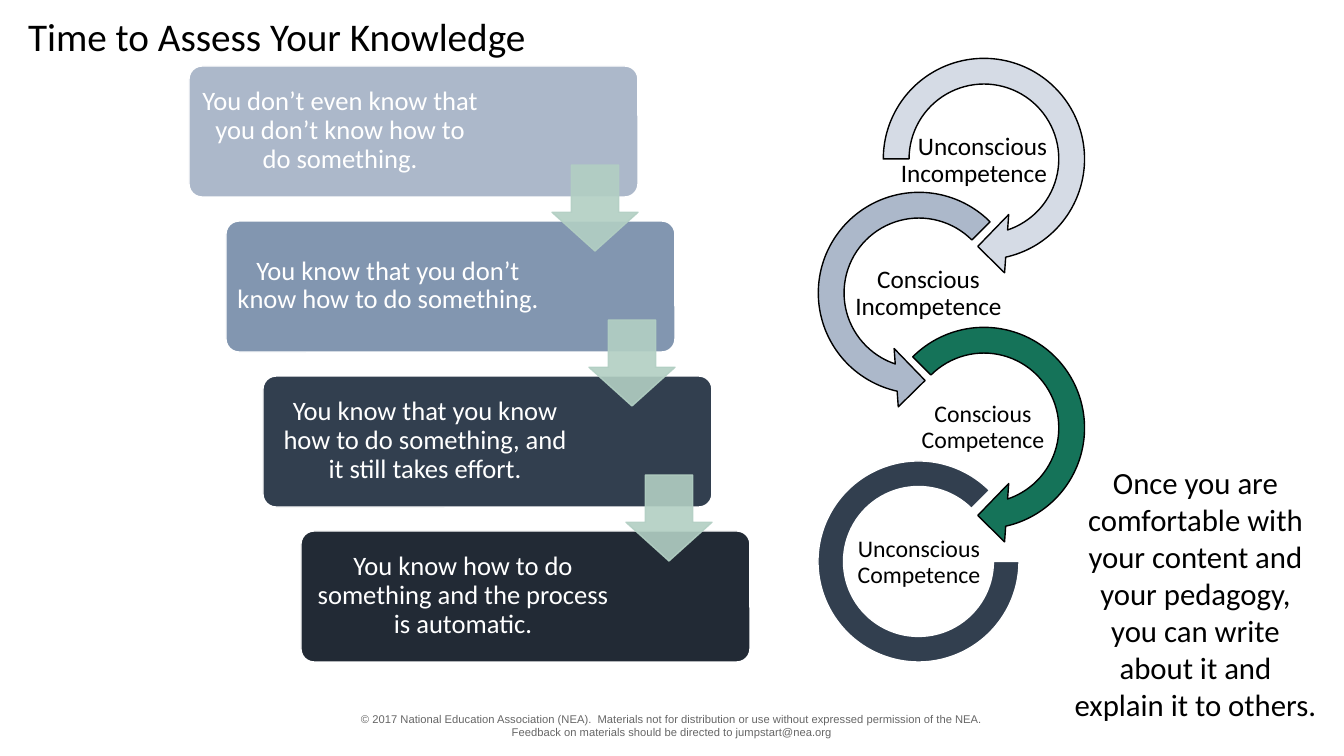
from lxml import etree
from pptx import Presentation
from pptx.dml.color import RGBColor
from pptx.enum.shapes import MSO_SHAPE
from pptx.enum.text import MSO_ANCHOR, PP_ALIGN
from pptx.oxml.ns import qn
from pptx.util import Pt

PX = 914400 / 100.8
LEFT, CENTER, RIGHT = PP_ALIGN.LEFT, PP_ALIGN.CENTER, PP_ALIGN.RIGHT
TOP, MIDDLE = MSO_ANCHOR.TOP, MSO_ANCHOR.MIDDLE
ROUND_RECT, DOWN_ARROW = MSO_SHAPE.ROUNDED_RECTANGLE, MSO_SHAPE.DOWN_ARROW
RIGHT_TURN, LEFT_TURN = MSO_SHAPE.CIRCULAR_ARROW, MSO_SHAPE.LEFT_CIRCULAR_ARROW
BLOCK_ARC = MSO_SHAPE.BLOCK_ARC

COLORS = {
    "black": "000000", "white": "FFFFFF", "grey": "666666",
    "pale": "D5DBE5", "light": "ACB8CA", "medium": "8296B0",
    "dark": "323F4F", "darkest": "222A35",
    "green": "157359", "mint": "B2CFC3",
}

# Text, fill and text width of each step
STEPS = [
    ("You don’t even know that you don’t know how to do something.", "light", 296),
    ("You know that you don’t know how to do something.", "medium", 318),
    ("You know that you know how to do something, and it still takes effort.", "dark", 318),
    ("You know how to do something and the process is automatic.", "darkest", 318),
]

# Shape, box (x, y, size), adjustments, fill and outline of each ring
RINGS = [
    (RIGHT_TURN, (867, 42, 234), (0.11, 11.42, 45, 108, 0.125), "pale", "black"),
    (LEFT_TURN, (802, 176, 234), (0.11, 11.42, 63, 189, 0.125), "light", "black"),
    (RIGHT_TURN, (867, 311, 234), (0.11, 11.42, 45, 135, 0.125), "green", "black"),
    (BLOCK_ARC, (818, 461, 201), (0, 189, 0.127), "dark", "white"),
]

# Text, box, font size and alignment of each ring label
LABELS = [
    ("Unconscious Incompetence", (889, 128, 159, 66), 18, RIGHT),
    ("Conscious Incompetence", (846, 261, 165, 66), 18, CENTER),
    ("Conscious Competence", (918, 395, 130, 66), 17, CENTER),
    ("Unconscious Competence", (854, 530, 130, 66), 17, CENTER),
]


def px(n):
    return round(n * PX)


def rgb(name):
    return RGBColor.from_string(COLORS[name])


def write(s, *lines, size, color="black", font="Calibri", align=CENTER,
          anchor=TOP, margins=(10, 5), spacing=None):
    tf = s.text_frame
    tf.word_wrap = True
    tf.vertical_anchor = anchor
    tf.margin_left = tf.margin_right = px(margins[0])
    tf.margin_top = tf.margin_bottom = px(margins[1])
    for i, line in enumerate(lines):
        p = tf.paragraphs[0] if i == 0 else tf.add_paragraph()
        p.alignment = align
        if spacing:
            p.line_spacing = spacing
        r = p.add_run()
        r.text = line
        r.font.size = Pt(size)
        r.font.name = font
        r.font.color.rgb = rgb(color)


def add_text(slide, box, *lines, **style):
    s = slide.shapes.add_textbox(*map(px, box))
    write(s, *lines, **style)


def add_shape(slide, kind, box, adjustments, fill, line, opacity=None):
    s = slide.shapes.add_shape(kind, *map(px, box))
    s.shadow.inherit = False
    for i, value in enumerate(adjustments):
        s.adjustments[i] = value
    s.fill.solid()
    s.fill.fore_color.rgb = rgb(fill)
    s.line.color.rgb = rgb(line)
    s.line.width = Pt(1)
    if opacity:
        for clr in s._element.spPr.iter(qn("a:srgbClr")):
            etree.SubElement(clr, qn("a:alpha")).set("val", str(opacity * 1000))


def add_title(slide, box, text):
    s = slide.shapes.title
    s.left, s.top, s.width, s.height = map(px, box)
    write(s, text, size=28, align=LEFT)


def add_steps(slide):
    places = [(189 + 112 * i // 3, 66 + 155 * i) for i in range(len(STEPS))]
    for (x, y), (text, fill, width) in zip(places, STEPS):
        add_shape(slide, ROUND_RECT, (x, y, 449, 131), (0.1,), fill, "white")
        add_text(slide, (x + 3, y + 3, width, 124), text, size=19, color="white",
                 anchor=MIDDLE, margins=(8, 8), spacing=0.9)
    # Arrows lie over the boxes they join
    for x, y in places[:-1]:
        add_shape(slide, DOWN_ARROW, (x + 363, y + 99, 86, 86), (0.55, 0.45),
                  "mint", "mint", opacity=90)


def add_rings(slide):
    for kind, (x, y, size), adjustments, fill, line in RINGS:
        add_shape(slide, kind, (x, y, size, size), adjustments, fill, line)
    for text, box, size, align in LABELS:
        add_text(slide, box, text, size=size, align=align, anchor=MIDDLE,
                 margins=(1, 1), spacing=0.9)


def main():
    prs = Presentation()
    prs.slide_width, prs.slide_height = px(1344), px(756)
    slide = prs.slides.add_slide(prs.slide_layouts[5])

    add_title(slide, (18, 7, 523, 57), "Time to Assess Your Knowledge")
    add_rings(slide)
    add_steps(slide)

    # Closing remark
    add_text(slide, (1062, 459, 267, 273),
             "Once you are comfortable with your content and your pedagogy,",
             "you can write about it and explain it to others.", size=22)

    # Footer
    add_text(slide, (168, 707, 1008, 37),
             "© 2017 National Education Association (NEA).  Materials not for "
             "distribution or use without expressed permission of the NEA.",
             "Feedback on materials should be directed to jumpstart@nea.org",
             size=8, color="grey", font="Arial")

    prs.save("out.pptx")


if __name__ == "__main__":
    main()
